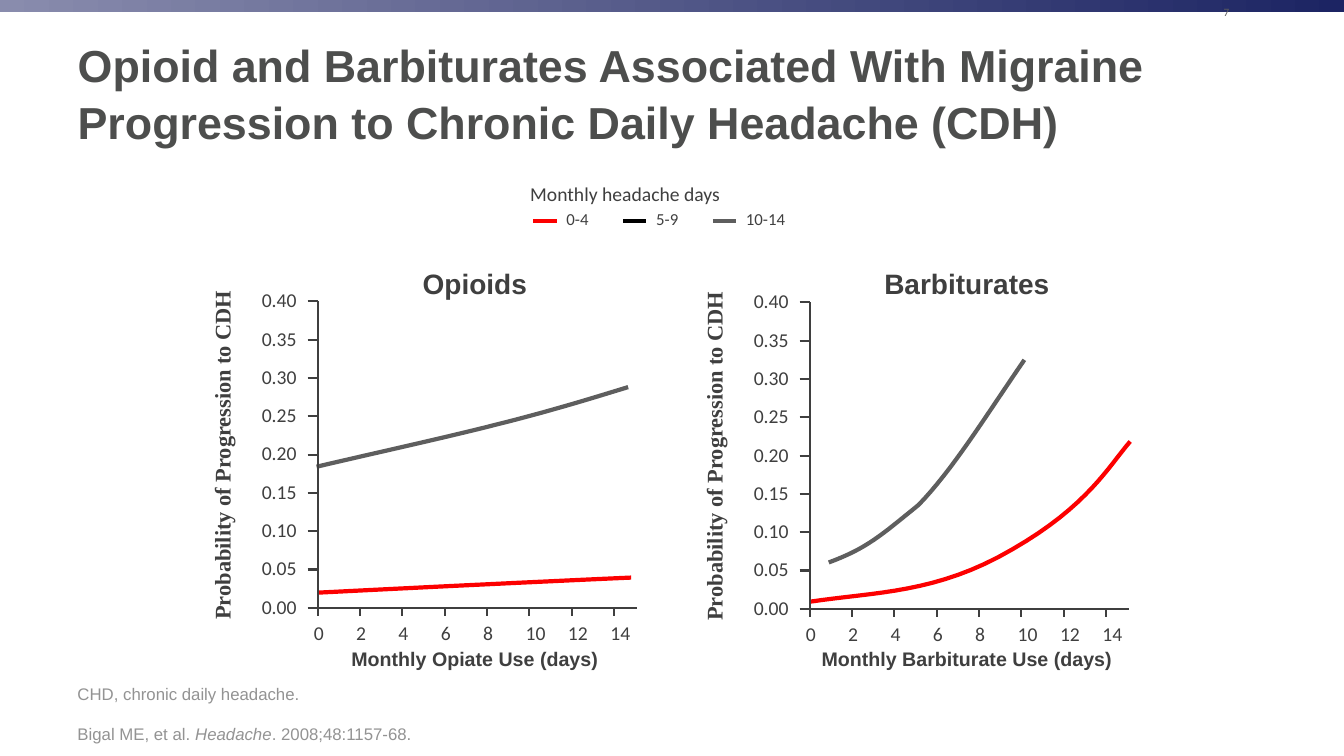
from dataclasses import dataclass

from lxml.etree import SubElement
from pptx import Presentation
from pptx.dml.color import RGBColor
from pptx.enum.shapes import MSO_CONNECTOR, MSO_SHAPE
from pptx.enum.text import MSO_ANCHOR, MSO_AUTO_SIZE, PP_ALIGN
from pptx.oxml.ns import qn
from pptx.util import Inches, Pt

TITLE = ("Opioid and Barbiturates Associated With Migraine "
         "Progression to Chronic Daily Headache (CDH)")
Y_TITLE = "Probability of Progression to CDH"
Y_LABELS = [f"{n * 0.05:.2f}" for n in range(9)]
X_LABELS = [str(n) for n in range(0, 15, 2)]
LEGEND_TITLE = "Monthly headache days"
LEGEND = [("0-4", "FC0000"), ("5-9", "000000"), ("10-14", "5E5E5E")]
COLOURS = dict(LEGEND)
FOOTNOTES = [
    [("CHD, chronic daily headache.", False)],
    [("Bigal ME, et al. ", False), ("Headache", True), (". 2008;48:1157-68.", False)],
]
# Each curve: start point, then two control points and an end point per section
PANELS = [
    {"title": "Opioids", "x_title": "Monthly Opiate Use (days)", "origin": (3.15, 6.03),
     "curves": {
         "10-14": [(3.14, 4.63), (3.78, 4.48), (4.42, 4.34), (4.93, 4.21),
                   (5.45, 4.08), (5.84, 3.96), (6.23, 3.84)],
         "0-4": [(3.15, 5.88), (3.15, 5.88), (4.7, 5.8), (6.26, 5.73)]}},
    {"title": "Barbiturates", "x_title": "Monthly Barbiturate Use (days)",
     "origin": (8.03, 6.04),
     "curves": {
         "10-14": [(8.22, 5.58), (8.6, 5.44), (8.74, 5.31), (9.11, 5.01),
                   (9.44, 4.67), (9.75, 4.17), (10.16, 3.57)],
         "0-4": [(8.03, 5.97), (8.69, 5.87), (9.29, 5.89), (10.04, 5.45),
                 (10.79, 5.02), (11, 4.62), (11.21, 4.38)]}},
]
Y_STEP, X_STEP, TICK = 0.38, 0.42, 0.1
AXIS_W, AXIS_H = 3.17, 3.04
CURVE_STEPS = 16


@dataclass(frozen=True)
class Theme:
    ink: str = "3F3F3F"
    bar: tuple = ("898CAD", "1C2463")
    axis_pt: float = 1.5
    curve_pt: float = 3
    title = {"name": "Arial", "size": 32, "bold": True, "color": "4D4E4D"}
    panel = {"name": "Arial", "size": 20, "bold": True, "color": ink}
    x_title = {"name": "Arial", "size": 14, "bold": True, "color": ink}
    y_title = {"name": "Times New Roman", "size": 16, "bold": True, "color": ink}
    label = {"name": "Calibri", "size": 14, "color": ink}
    legend = {"name": "Calibri", "size": 12, "color": ink}
    number = {"name": "Calibri", "size": 8, "color": "5E5E5E"}
    note = {"name": "Arial", "size": 12, "color": "939393"}


THEME = Theme()


def style(font, fmt):
    for name, value in fmt.items():
        if name == "color":
            font.color.rgb = RGBColor.from_string(value)
        else:
            setattr(font, name, Pt(value) if name == "size" else value)


def add_text(slide, box, text, fmt, align=PP_ALIGN.LEFT, wrap=True):
    sp = slide.shapes.add_textbox(*map(Inches, box))
    tf = sp.text_frame
    tf.word_wrap = wrap
    p = tf.paragraphs[0]
    p.alignment = align
    r = p.add_run()
    r.text = text
    style(r.font, fmt)
    return sp


def set_line(shape, color, width):
    shape.line.color.rgb = RGBColor.from_string(color)
    shape.line.width = Pt(width)


def add_line(slide, start, end, color, width):
    cxn = slide.shapes.add_connector(MSO_CONNECTOR.STRAIGHT, *map(Inches, start + end))
    set_line(cxn, color, width)
    SubElement(cxn._element.spPr, qn("a:effectLst"))


def add_path(slide, points, color, width):
    pts = [(Inches(x), Inches(y)) for x, y in points]
    builder = slide.shapes.build_freeform(*pts[0])
    builder.add_line_segments(pts[1:], close=False)
    sp = builder.convert_to_shape()
    sp.fill.background()
    sp.shadow.inherit = False
    set_line(sp, color, width)


def trace(knots):
    """Return points along the cubic sections that the knots describe."""
    points = [knots[0]]
    for i in range(0, len(knots) - 1, 3):
        section = knots[i:i + 4]
        for step in range(1, CURVE_STEPS + 1):
            t = step / CURVE_STEPS
            weights = ((1 - t) ** 3, 3 * t * (1 - t) ** 2, 3 * t * t * (1 - t), t ** 3)
            points.append(tuple(sum(w * k[axis] for w, k in zip(weights, section))
                                for axis in (0, 1)))
    return points


def add_header(slide):
    bar = slide.shapes.add_shape(MSO_SHAPE.RECTANGLE, 0, 0, Inches(13.33), Inches(0.12))
    bar.shadow.inherit = False
    bar.line.fill.background()
    bar.fill.gradient()
    bar.fill.gradient_angle = 0
    for stop, color, position in zip(bar.fill.gradient_stops, THEME.bar, (0, 1)):
        stop.color.rgb = RGBColor.from_string(color)
        stop.position = position
    add_text(slide, (9.67, 0, 2.62, 0.52), "7", THEME.number, PP_ALIGN.RIGHT)

    title = slide.shapes.title
    for name, value in zip(("left", "top", "width", "height"), (0.67, 0.22, 11.75, 1.3)):
        setattr(title, name, Inches(value))
    tf = title.text_frame
    tf.text = TITLE
    tf.auto_size = MSO_AUTO_SIZE.NONE
    tf.vertical_anchor = MSO_ANCHOR.BOTTOM
    p = tf.paragraphs[0]
    p.alignment = PP_ALIGN.LEFT
    p.line_spacing = 1.05
    style(p.runs[0].font, THEME.title)


def add_legend(slide):
    add_text(slide, (5.16, 1.76, 2.09, 0.33), LEGEND_TITLE, THEME.label, wrap=False)
    for i, (name, color) in enumerate(LEGEND):
        x = 5.29 + i * 0.89
        add_line(slide, (x, 2.19), (x + 0.23, 2.19), color, THEME.curve_pt)
        width = 0.59 if len(name) > 3 else 0.42
        add_text(slide, (x + 0.23, 2.02, width, 0.3), name, THEME.legend, wrap=False)


def add_panel(slide, panel):
    x0, y0 = panel["origin"]
    axis = THEME.ink, THEME.axis_pt
    for name, knots in panel["curves"].items():
        add_path(slide, trace(knots), COLOURS[name], THEME.curve_pt)
    add_path(slide, [(x0, y0 - AXIS_H), (x0, y0), (x0 + AXIS_W, y0)], *axis)
    for i, label in enumerate(Y_LABELS):
        y = y0 - i * Y_STEP
        add_line(slide, (x0 - TICK, y), (x0, y), *axis)
        add_text(slide, (x0 - 0.66, y - 0.18, 0.55, 0.33), label, THEME.label,
                 PP_ALIGN.RIGHT, wrap=False)
    for i, label in enumerate(X_LABELS):
        x = x0 + i * X_STEP
        add_line(slide, (x, y0 + 0.08), (x, y0 - 0.01), *axis)
        add_text(slide, (x - 0.14, y0 + 0.08, 0.2 + 0.1 * len(label), 0.33), label,
                 THEME.label, PP_ALIGN.RIGHT, wrap=False)
    middle = x0 + 1.56
    add_text(slide, (middle - 1.7, 2.59, 3.4, 0.43), panel["title"], THEME.panel,
             PP_ALIGN.CENTER)
    add_text(slide, (middle - 1.58, 6.37, 3.16, 0.33), panel["x_title"], THEME.x_title,
             PP_ALIGN.CENTER)
    sp = add_text(slide, (x0 - 2.89, y0 - 1.7, 3.88, 0.37), Y_TITLE, THEME.y_title,
                  PP_ALIGN.CENTER)
    sp.rotation = 270


def add_footnotes(slide):
    tf = slide.shapes.add_textbox(*map(Inches, (0.67, 6.95, 11.75, 0.48))).text_frame
    tf.word_wrap = True
    tf.vertical_anchor = MSO_ANCHOR.BOTTOM
    for i, runs in enumerate(FOOTNOTES):
        p = tf.add_paragraph() if i else tf.paragraphs[0]
        p.space_before = Pt(14 * i)
        for text, italic in runs:
            r = p.add_run()
            r.text = text
            style(r.font, {**THEME.note, "italic": italic})


def main():
    prs = Presentation()
    prs.slide_width, prs.slide_height = Inches(13.33), Inches(7.5)
    slide = prs.slides.add_slide(prs.slide_layouts[5])
    add_header(slide)
    add_legend(slide)
    for panel in PANELS:
        add_panel(slide, panel)
    add_footnotes(slide)
    prs.save("out.pptx")


if __name__ == "__main__":
    main()
